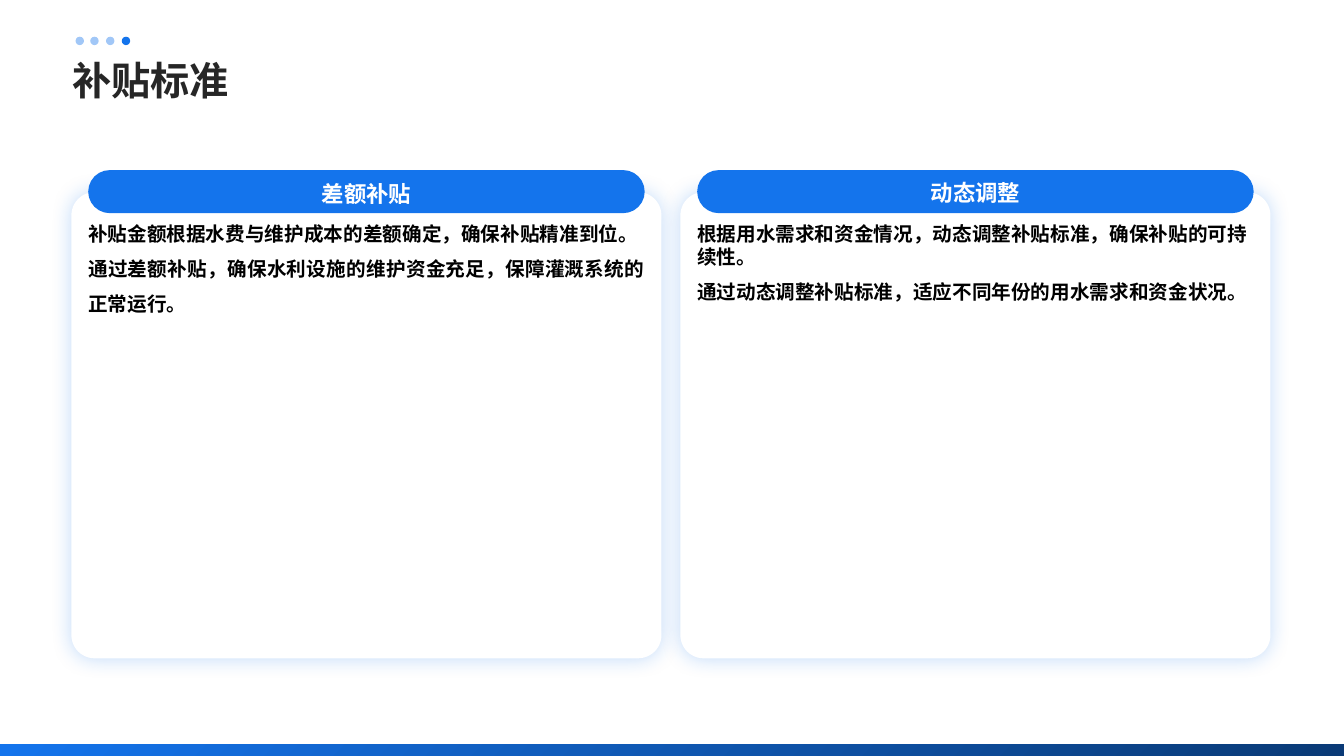
from dataclasses import dataclass

import pptx
import pptx.dml.color
import pptx.enum.shapes
import pptx.enum.text
import pptx.oxml
import pptx.oxml.ns
import pptx.util
from lxml import etree

PX = 9525  # EMU per px, 96 px to the inch
FONT = "Noto Sans CJK SC"
COLORS = {"blue": "1474EC", "navy": "0A3A76", "white": "FFFFFF",
          "black": "000000", "title": "262626"}
SHAPE = pptx.enum.shapes.MSO_SHAPE
ALIGN = pptx.enum.text.PP_ALIGN
ANCHOR = pptx.enum.text.MSO_ANCHOR


@dataclass
class Card:
    heading: str
    heading_top: int
    rule: str
    effect: str


CARDS = [
    Card("差额补贴", 169,
         "补贴金额根据水费与维护成本的差额确定，确保补贴精准到位。",
         "通过差额补贴，确保水利设施的维护资金充足，保障灌溉系统的正常运行。"),
    Card("动态调整", 168,
         "根据用水需求和资金情况，动态调整补贴标准，确保补贴的可持续性。",
         "通过动态调整补贴标准，适应不同年份的用水需求和资金状况。"),
]
CARD_LEFT, CARD_WIDTH, CARD_PITCH, CARD_PAD = 68, 562, 580, 16
DOT_LEFT, DOT_SPAN, DOT_COUNT = 72, 44, 4


def rgb(name: str) -> pptx.dml.color.RGBColor:
    return pptx.dml.color.RGBColor.from_string(COLORS[name])


def emu(*lengths: int) -> list[pptx.util.Emu]:
    return [pptx.util.Emu(n * PX) for n in lengths]


def add_shape(shapes, kind, box: tuple, color: str, radius: float | None = None):
    sp = shapes.add_shape(kind, *emu(*box))
    sp.shadow.inherit = False
    sp.fill.solid()
    sp.fill.fore_color.rgb = rgb(color)
    sp.line.fill.background()
    if radius is not None:
        sp.adjustments[0] = radius
    return sp


def add_text(sp, text: str, *, size: int, color: str, align, spacing: float,
             anchor=ANCHOR.TOP) -> None:
    """Fill the first paragraph, or add one after existing text."""
    tf = sp.text_frame
    tf.word_wrap = True
    tf.auto_size = pptx.enum.text.MSO_AUTO_SIZE.NONE
    tf.vertical_anchor = anchor
    tf.margin_left = tf.margin_top = tf.margin_right = tf.margin_bottom = 0
    p = tf.add_paragraph() if tf.text else tf.paragraphs[0]
    p.alignment = align
    p.line_spacing = spacing
    p.space_before = pptx.util.Pt(0)
    r = p.add_run()
    r.text = text
    r.font.size = pptx.util.Pt(size)
    r.font.bold = True
    r.font.name = FONT
    r.font.color.rgb = rgb(color)
    ea = etree.SubElement(r.font._element, pptx.oxml.ns.qn("a:ea"))
    ea.set("typeface", FONT)


def add_glow(sp, color: str, alpha: int, blur: int) -> None:
    effects = sp._element.spPr.find(pptx.oxml.ns.qn("a:effectLst"))
    effects.append(pptx.oxml.parse_xml(
        f'<a:outerShdw {pptx.oxml.ns.nsdecls("a")} blurRad="{pptx.util.Pt(blur)}" '
        f'dist="0" dir="0" algn="ctr" rotWithShape="0"><a:srgbClr val="{COLORS[color]}">'
        f'<a:alpha val="{alpha * 1000}"/></a:srgbClr></a:outerShdw>'))


def set_alpha(sp, alpha: int) -> None:
    clr = sp._element.spPr.find(".//" + pptx.oxml.ns.qn("a:srgbClr"))
    etree.SubElement(clr, pptx.oxml.ns.qn("a:alpha")).set("val", str(alpha * 1000))


def add_card(s, card: Card, left: int) -> None:
    panel = add_shape(s.shapes, SHAPE.ROUNDED_RECTANGLE,
                      (left, 183, CARD_WIDTH, 444), "white", 0.05)
    add_glow(panel, "blue", 25, 15)
    inner, width = left + CARD_PAD, CARD_WIDTH - 2 * CARD_PAD
    body = s.shapes.add_textbox(*emu(inner, 211, width, 391))
    add_text(body, card.rule, size=14, color="black", align=ALIGN.LEFT, spacing=1.0)
    add_text(body, card.effect, size=14, color="black", align=ALIGN.JUSTIFY, spacing=1.5)
    add_shape(s.shapes, SHAPE.ROUNDED_RECTANGLE, (inner, 162, width, 41), "blue", 0.5)
    heading = s.shapes.add_textbox(*emu(inner, card.heading_top, width, 29))
    add_text(heading, card.heading, size=16, color="white",
             align=ALIGN.CENTER, spacing=1.1)


def main() -> None:
    prs = pptx.Presentation()
    prs.slide_width, prs.slide_height = emu(1280, 720)
    s = prs.slides.add_slide(prs.slide_layouts[5])

    # Title
    title = s.shapes.title
    title.left, title.top, title.width, title.height = emu(69, 49, 1140, 49)
    add_text(title, "补贴标准", size=28, color="title", align=ALIGN.JUSTIFY,
             spacing=1.1, anchor=ANCHOR.MIDDLE)

    # Footer bar
    bar = add_shape(s.shapes, SHAPE.RECTANGLE, (0, 709, 1280, 12), "blue")
    bar.fill.gradient()
    bar.fill.gradient_angle = 315
    for stop, color in zip(bar.fill.gradient_stops, ("blue", "navy")):
        stop.color.rgb = rgb(color)

    # Cards
    for i, card in enumerate(CARDS):
        add_card(s, card, CARD_LEFT + i * CARD_PITCH)

    # Dots above the title, the last one solid
    dots = s.shapes.add_group_shape()
    for i in range(DOT_COUNT):
        left = DOT_LEFT + i * DOT_SPAN // (DOT_COUNT - 1)
        dot = add_shape(dots.shapes, SHAPE.OVAL, (left, 35, 8, 8), "blue")
        if i < DOT_COUNT - 1:
            set_alpha(dot, 40)

    prs.save("out.pptx")


if __name__ == "__main__":
    main()
